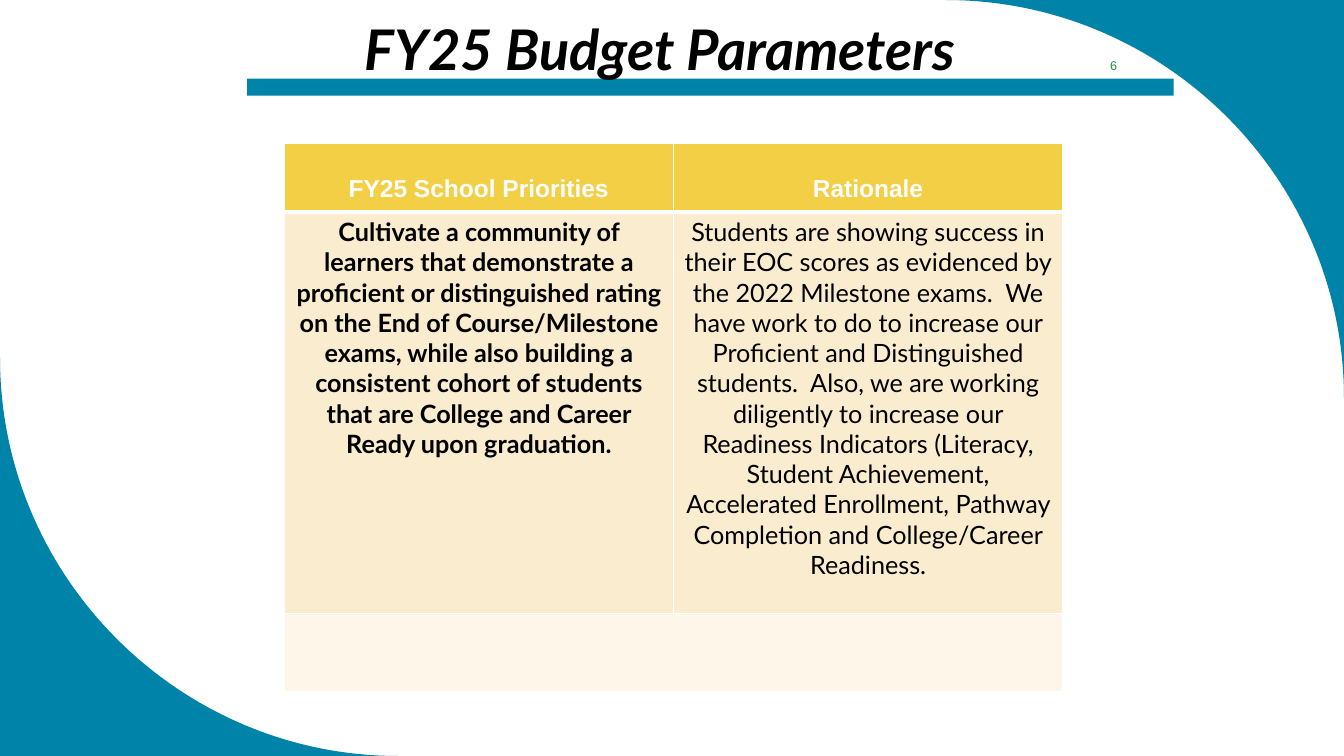
from lxml import etree
from pptx import Presentation
from pptx.dml.color import RGBColor
from pptx.enum import shapes, text
from pptx.oxml import ns
from pptx.util import Inches, Pt

TITLE = "FY25 Budget Parameters"
PAGE = "6"
HEADS = ["FY25 School Priorities", "Rationale"]
BODY = [
    "Cultivate a community of learners that demonstrate a proficient or distinguished rating on the End of Course/Milestone exams, while also building a consistent cohort of students that are College and Career Ready upon graduation.",
    "Students are showing success in their EOC scores as evidenced by the 2022 Milestone exams.  We have work to do to increase our Proficient and Distinguished students.  Also, we are working diligently to increase our Readiness Indicators (Literacy, Student Achievement, Accelerated Enrollment, Pathway Completion and College/Career Readiness.",
]
WIDE, HIGH, RADIUS = 13.33, 7.5, 3.95
BEND = 0.55
ROWS = [0.68, 3.99, 0.77]
COL = 3.86


class Theme:
    blue, gold, cream, pale = "0083A9", "F3CF45", "FAEDCF", "FDF6E9"
    white, black, green = "FFFFFF", "000000", "159839"
    sans, lato = "Arial", "Lato"
    title, head, body, page = 40, 17.5, 18, 9


def paint(item, color):
    item.fill.solid()
    item.fill.fore_color.rgb = RGBColor.from_string(color)


def plain(shape):
    paint(shape, Theme.blue)
    shape.line.fill.background()
    shape.shadow.inherit = False


def place(shape, left, top, width, height):
    shape.left, shape.top = Inches(left), Inches(top)
    shape.width, shape.height = Inches(width), Inches(height)


def write(frame, words, size, font=Theme.lato, color=Theme.black,
          bold=False, italic=False, anchor=text.MSO_ANCHOR.TOP):
    frame.word_wrap = True
    frame.vertical_anchor = anchor
    para = frame.paragraphs[0]
    para.alignment = text.PP_ALIGN.CENTER
    run = para.add_run()
    run.text = words
    run.font.size, run.font.name = Pt(size), font
    run.font.bold, run.font.italic = bold, italic
    run.font.color.rgb = RGBColor.from_string(color)


def corner(slide, left, top, turn=False):
    side = Inches(RADIUS)
    spots = [(1, 0), (0, 0), (BEND, 0), (1, 1 - BEND), (1, 1)]
    if turn:
        spots = [(1 - x, 1 - y) for x, y in spots]
    tip, start, *curve = [(round(x * side), round(y * side)) for x, y in spots]
    build = slide.shapes.build_freeform(*tip, scale=1.0)
    build.add_line_segments([start, curve[-1]], close=True)
    shape = build.convert_to_shape(Inches(left), Inches(top))
    plain(shape)
    line = shape._element.findall(".//" + ns.qn("a:lnTo"))[1]
    bezier = etree.Element(ns.qn("a:cubicBezTo"))
    for x, y in curve:
        etree.SubElement(bezier, ns.qn("a:pt"), x=str(x), y=str(y))
    line.getparent().replace(line, bezier)


def border(cell, **sides):
    props = cell._tc.get_or_add_tcPr()
    for spot, side in enumerate("LRTB"):
        line = etree.Element(ns.qn("a:ln" + side), w=str(Pt(sides.get(side, 1))))
        fill = etree.SubElement(line, ns.qn("a:solidFill"))
        etree.SubElement(fill, ns.qn("a:srgbClr"), val=Theme.white)
        props.insert(spot, line)


def grid(slide):
    table = slide.shapes.add_table(
        len(ROWS), len(HEADS), Inches(2.82), Inches(1.42),
        Inches(COL * len(HEADS)), Inches(sum(ROWS))).table
    for row, height in zip(table.rows, ROWS):
        row.height = Inches(height)
    for index, (head, body) in enumerate(zip(HEADS, BODY)):
        table.columns[index].width = Inches(COL)
        top, main, last = (table.cell(row, index) for row in range(len(ROWS)))
        for cell, color in zip((top, main, last),
                               (Theme.gold, Theme.cream, Theme.pale)):
            paint(cell, color)
        border(top, B=3)
        border(main, T=3)
        border(last)
        top.margin_bottom = Inches(0.09)
        write(top.text_frame, head, Theme.head, font=Theme.sans,
              color=Theme.white, bold=True)
        top.vertical_anchor = text.MSO_ANCHOR.BOTTOM
        write(main.text_frame, body, Theme.body, bold=index == 0)
    table.cell(2, 0).merge(table.cell(2, 1))


def main():
    deck = Presentation()
    deck.slide_width, deck.slide_height = Inches(WIDE), Inches(HIGH)
    slide = deck.slides.add_slide(deck.slide_layouts[5])
    corner(slide, WIDE - RADIUS, 0)
    corner(slide, 0, HIGH - RADIUS, turn=True)
    bar = slide.shapes.add_shape(
        shapes.MSO_SHAPE.RECTANGLE, *map(Inches, (2.45, 0.78, 9.19, 0.17)))
    plain(bar)
    title = slide.shapes.title
    place(title, 3.05, 0.09, 6.99, 0.77)
    write(title.text_frame, TITLE, Theme.title, bold=True, italic=True)
    slide.shapes._spTree.append(title._element)
    grid(slide)
    page = slide.shapes.add_textbox(*map(Inches, (10.64, 0.5, 0.81, 0.3)))
    write(page.text_frame, PAGE, Theme.page, font=Theme.sans,
          color=Theme.green, anchor=text.MSO_ANCHOR.MIDDLE)
    deck.save("out.pptx")


if __name__ == "__main__":
    main()
